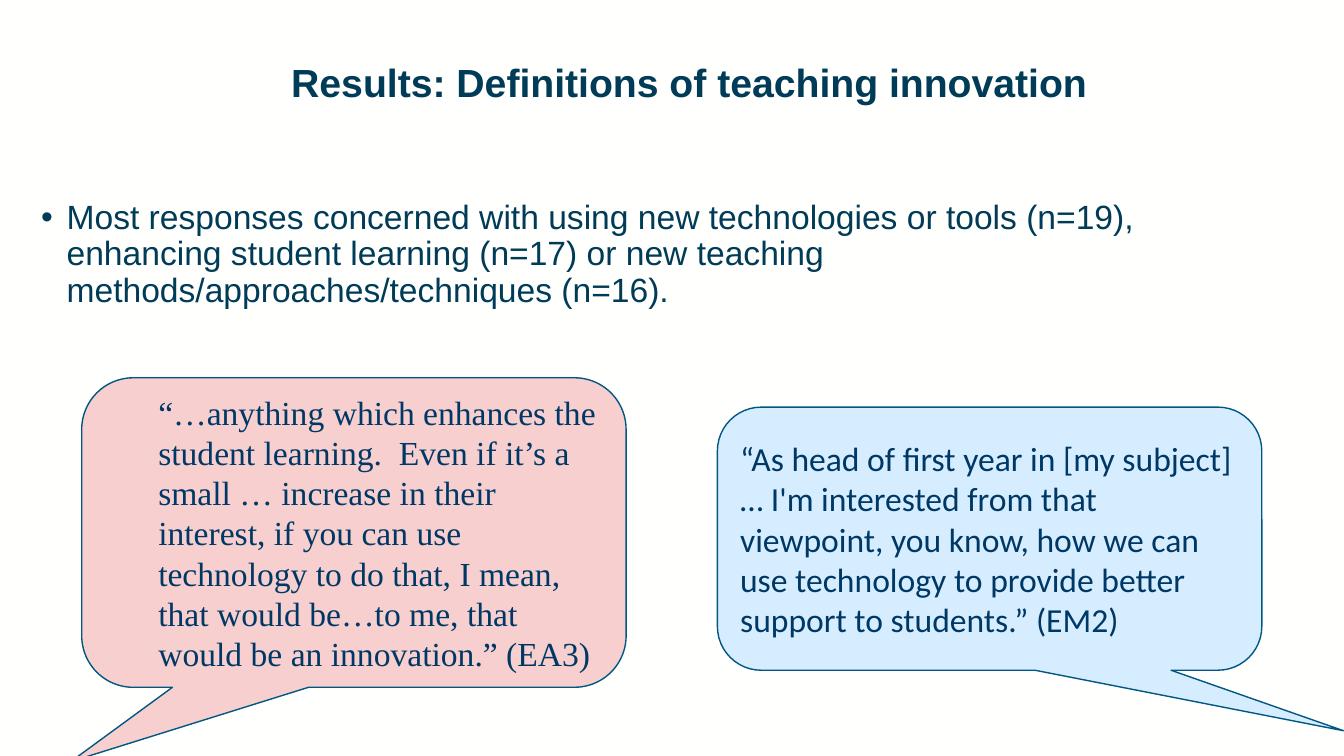
from dataclasses import dataclass

from lxml import etree
from pptx import Presentation
from pptx.dml.color import RGBColor
from pptx.enum.shapes import MSO_SHAPE
from pptx.enum.text import MSO_ANCHOR, PP_ALIGN
from pptx.oxml.ns import qn
from pptx.util import Cm, Pt

BUBBLE = MSO_SHAPE.ROUNDED_RECTANGULAR_CALLOUT
TOP, MIDDLE = MSO_ANCHOR.TOP, MSO_ANCHOR.MIDDLE
LEFT = PP_ALIGN.LEFT


@dataclass(frozen=True)
class Theme:
    back: str = "FFFFFE"
    ink: str = "003B58"
    quote: str = "003865"
    edge: str = "005782"
    pink: str = "F8CFCF"
    blue: str = "D6EDFF"
    sans: str = "Arial"
    serif: str = "Times New Roman"
    soft: str = "Calibri"
    head: int = 28
    body: int = 24


def color(code):
    return RGBColor.from_string(code)


class Deck:
    def __init__(self, theme):
        self.theme = theme
        self.file = Presentation()
        self.file.slide_width, self.file.slide_height = Cm(33.87), Cm(19.05)
        self.slide = self.file.slides.add_slide(self.file.slide_layouts[6])
        fill = self.slide.background.fill
        fill.solid()
        fill.fore_color.rgb = color(theme.back)

    def label(self, shape, text, face, size, ink, anchor=TOP):
        """Fill a shape with one wrapped paragraph and return the paragraph."""
        frame = shape.text_frame
        frame.word_wrap = True
        frame.vertical_anchor = anchor
        frame.text = text
        para = frame.paragraphs[0]
        para.alignment = LEFT
        font = para.runs[0].font
        font.name, font.size = face, Pt(size)
        font.color.rgb = color(ink)
        return para

    def indent(self, para, left, first=0):
        props = para._p.get_or_add_pPr()
        props.set("marL", str(Cm(left)))
        props.set("indent", str(Cm(first)))
        return props

    def text(self, box, text, size):
        shape = self.slide.shapes.add_textbox(*map(Cm, box))
        para = self.label(shape, text, self.theme.sans, size, self.theme.ink)
        para.line_spacing = 0.9
        return para

    def title(self, box, text):
        para = self.text(box, text, self.theme.head)
        para.runs[0].font.bold = True

    def bullet(self, box, text):
        para = self.text(box, text, self.theme.body)
        props = self.indent(para, 0.64, -0.64)
        etree.SubElement(props, qn("a:buFont")).set("typeface", "Arial")
        etree.SubElement(props, qn("a:buChar")).set("char", "•")

    def bubble(self, box, tip, fill, face, text):
        """Add a speech bubble; tip is the tail's end relative to its centre."""
        shape = self.slide.shapes.add_shape(BUBBLE, *map(Cm, box))
        shape.shadow.inherit = False
        for spot, value in enumerate(tip):
            shape.adjustments[spot] = value
        shape.fill.solid()
        shape.fill.fore_color.rgb = color(fill)
        shape.line.color.rgb = color(self.theme.edge)
        shape.line.width = Pt(1)
        return self.label(shape, text, face, self.theme.body,
                          self.theme.quote, MIDDLE)


def main():
    theme = Theme()
    deck = Deck(theme)
    deck.title((7.09, 1.47, 25.58, 2.46),
               "Results: Definitions of teaching innovation")
    deck.bullet((0.79, 4.93, 31.88, 12.4),
                "Most responses concerned with using new technologies or tools "
                "(n=19), enhancing student learning (n=17) or new teaching "
                "methods/approaches/techniques (n=16).")
    para = deck.bubble((2.06, 9.52, 13.72, 7.8), (-0.52, 0.74),
                       theme.pink, theme.serif,
                       "“…anything which enhances the student learning.  Even if "
                       "it’s a small … increase in their interest, if you can use "
                       "technology to do that, I mean, that would be…to me, that "
                       "would be an innovation.” (EA3)")
    deck.indent(para, 1.3)
    para.space_after = Pt(8)
    deck.bubble((18.08, 10.26, 13.72, 6.63), (0.65, 0.73),
                theme.blue, theme.soft,
                "“As head of first year in [my subject] … I'm interested from "
                "that viewpoint, you know, how we can use technology to provide "
                "better support to students.” (EM2)")
    deck.file.save("out.pptx")


if __name__ == "__main__":
    main()
